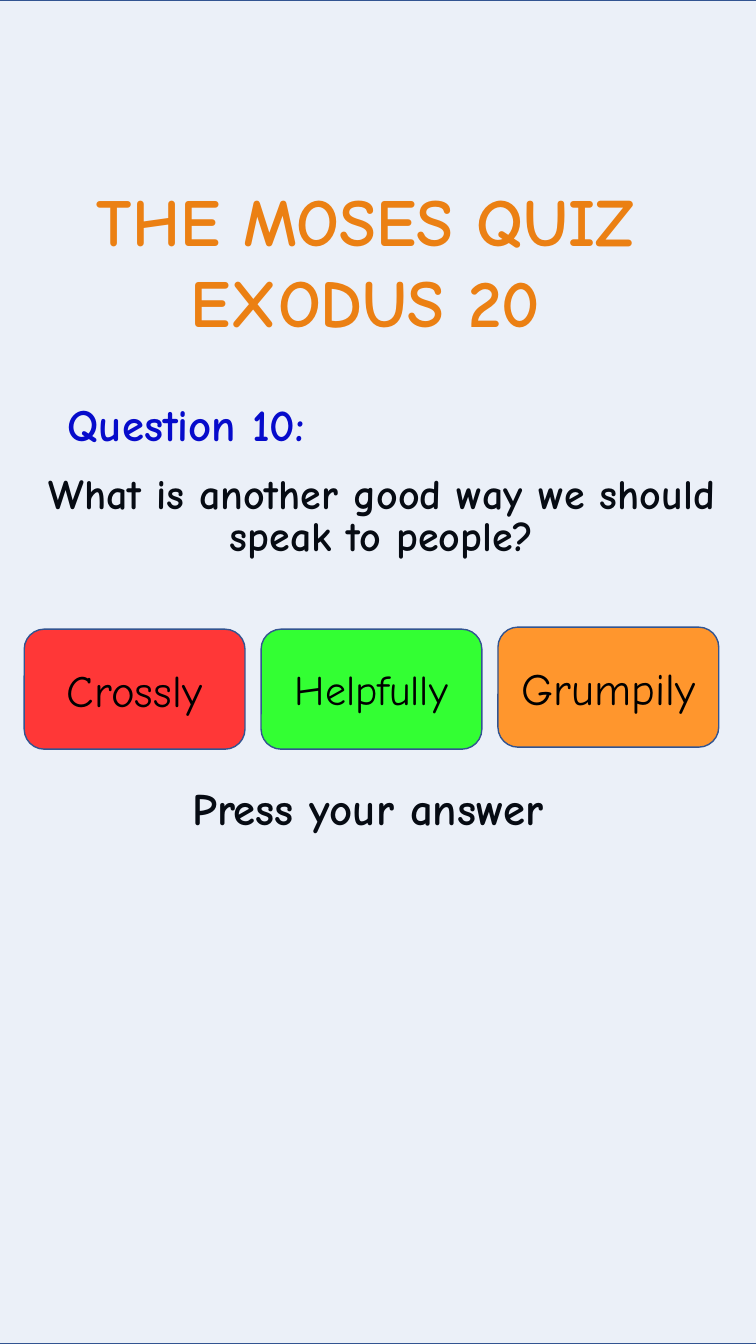
from dataclasses import dataclass
from typing import Optional, Union

import pptx
import pptx.dml.color
import pptx.enum.shapes
import pptx.enum.text
import pptx.oxml
import pptx.oxml.ns
import pptx.util

PX = 9144  # EMU per px, 100 px to the inch
ALIGN = pptx.enum.text.PP_ALIGN
ANCHOR = pptx.enum.text.MSO_ANCHOR
SHAPE = pptx.enum.shapes.MSO_SHAPE
Pt = pptx.util.Pt


@dataclass(frozen=True)
class Theme:
    font: str = "Comic Neue"
    title: str = "FF8200"
    label: str = "0000CC"
    ink: str = "000000"
    border: str = "325491"
    veil: str = "4472C4"
    red: str = "FF3737"
    green: str = "33FF33"
    orange: str = "FF962D"
    title_pt: int = 48
    large_pt: int = 32
    body_pt: int = 30
    veil_opacity: int = 10


@dataclass(frozen=True)
class Box:
    x: int
    y: int
    w: int
    h: int

    def emu(self) -> tuple:
        return tuple(pptx.util.Emu(v * PX) for v in (self.x, self.y, self.w, self.h))


@dataclass(frozen=True)
class Style:
    size: int
    color: str
    bold: bool = True
    align: ALIGN = ALIGN.CENTER
    wrap: bool = True
    spacing: Union[float, pptx.util.Length] = 1.0
    before: float = 0
    anchor: ANCHOR = ANCHOR.TOP


@dataclass(frozen=True)
class Caption:
    text: str
    box: Box
    style: Style


@dataclass(frozen=True)
class Answer:
    text: str
    box: Box
    fill: str
    size: int


T = Theme()

TITLE = Caption("THE MOSES QUIZ \nEXODUS 20 ", Box(30, 173, 689, 172),
                Style(T.title_pt, T.title, wrap=False))
CAPTIONS = [
    Caption("Question 10:", Box(33, 389, 304, 64),
            Style(T.large_pt, T.label, wrap=False)),
    Caption("What is another good way we should speak to people?",
            Box(16, 467, 726, 140),
            Style(T.body_pt, T.ink, spacing=Pt(30), before=7.5)),
    Caption("Press your answer", Box(181, 775, 422, 72),
            Style(T.large_pt, T.ink, align=ALIGN.LEFT, spacing=0.9, before=7.5)),
]
VEIL = Box(-42, 0, 798, 1333)
ANSWERS = [
    Answer("Crossly", Box(24, 624, 219, 119), T.red, T.large_pt),
    Answer("Helpfully", Box(259, 624, 219, 119), T.green, T.body_pt),
    Answer("Grumpily", Box(494, 622, 219, 119), T.orange, T.large_pt),
]


def rgb(color: str) -> pptx.dml.color.RGBColor:
    return pptx.dml.color.RGBColor.from_string(color)


def write(sp, text: str, style: Style) -> None:
    tf = sp.text_frame
    tf.text = text
    tf.word_wrap = style.wrap
    tf.auto_size = pptx.enum.text.MSO_AUTO_SIZE.NONE
    tf.vertical_anchor = style.anchor
    for p in tf.paragraphs:
        p.alignment = style.align
        p.line_spacing = style.spacing
        p.space_before = Pt(style.before)
        for r in p.runs:
            r.font.name = T.font
            r.font.size = Pt(style.size)
            r.font.bold = style.bold
            r.font.color.rgb = rgb(style.color)


def add_panel(s, kind: SHAPE, box: Box, fill: str, opacity: Optional[int] = None):
    sp = s.shapes.add_shape(kind, *box.emu())
    sp.shadow.inherit = False
    sp.fill.solid()
    sp.fill.fore_color.rgb = rgb(fill)
    sp.line.color.rgb = rgb(T.border)
    sp.line.width = Pt(1)
    if opacity is not None:
        clr = sp.fill._xPr.find(".//" + pptx.oxml.ns.qn("a:srgbClr"))
        alpha = pptx.oxml.parse_xml(
            f'<a:alpha {pptx.oxml.ns.nsdecls("a")} val="{opacity * 1000}"/>')
        clr.append(alpha)
    return sp


def main() -> None:
    prs = pptx.Presentation()
    prs.slide_width = pptx.util.Emu(750 * PX)
    prs.slide_height = pptx.util.Emu(1333 * PX)
    s = prs.slides.add_slide(prs.slide_layouts.get_by_name("Title Only"))

    # Title
    title = s.shapes.title
    title.left, title.top, title.width, title.height = TITLE.box.emu()
    write(title, TITLE.text, TITLE.style)

    # Question and prompt
    for caption in CAPTIONS:
        write(s.shapes.add_textbox(*caption.box.emu()), caption.text, caption.style)

    # Pale blue veil over the whole slide
    add_panel(s, SHAPE.RECTANGLE, VEIL, T.veil, T.veil_opacity)

    # Answer buttons
    for answer in ANSWERS:
        sp = add_panel(s, SHAPE.ROUNDED_RECTANGLE, answer.box, answer.fill)
        write(sp, answer.text,
              Style(answer.size, T.ink, bold=False, anchor=ANCHOR.MIDDLE))

    prs.save("out.pptx")


if __name__ == "__main__":
    main()
